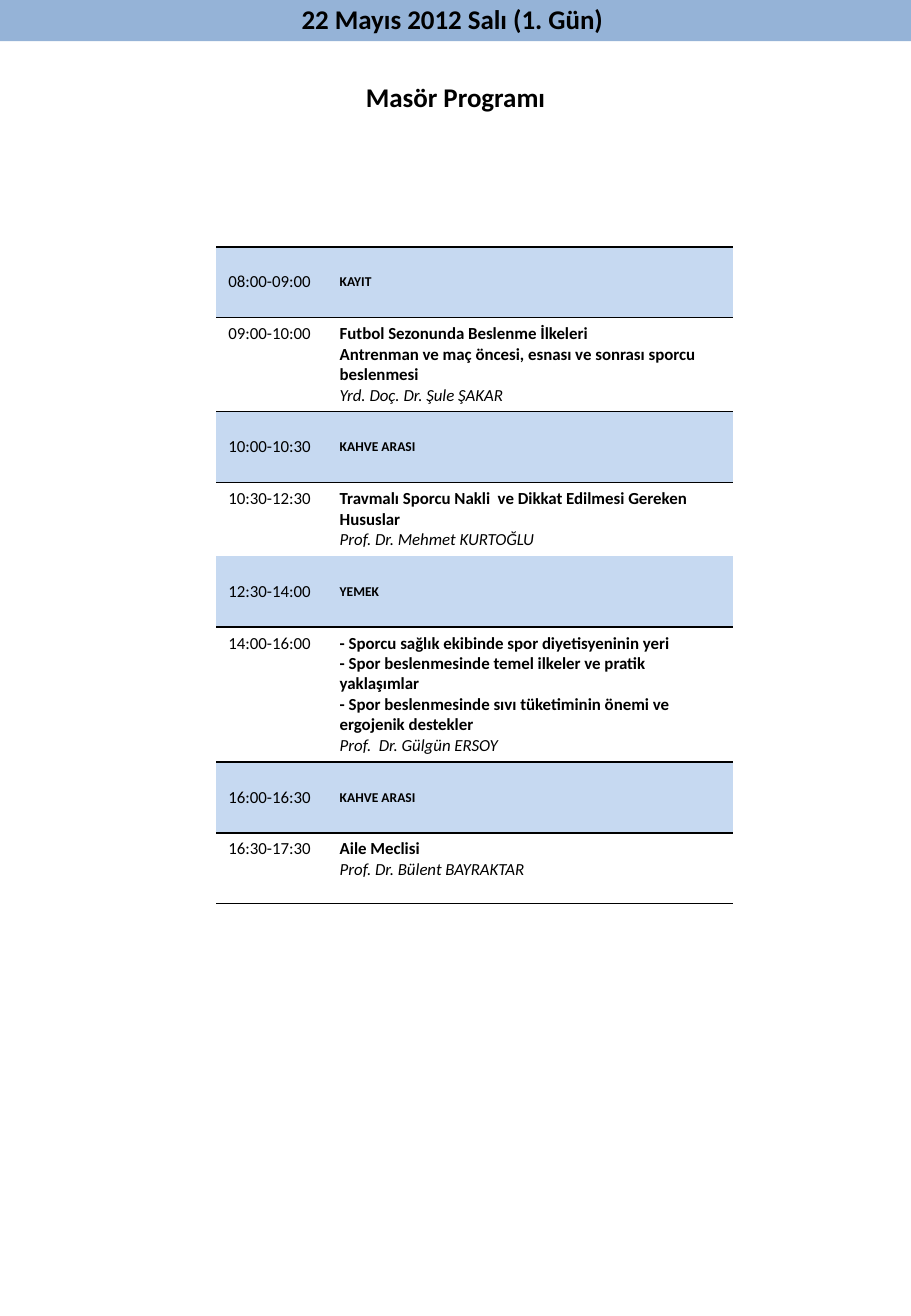
from dataclasses import dataclass

from lxml.etree import SubElement
from pptx import Presentation
from pptx.dml.color import RGBColor
from pptx.enum.shapes import MSO_SHAPE as Preset
from pptx.enum.text import MSO_ANCHOR as Anchor, MSO_AUTO_SIZE as AutoSize, PP_ALIGN as Align
from pptx.oxml.ns import qn
from pptx.slide import Slide
from pptx.table import _Cell as Cell
from pptx.text.text import TextFrame, _Paragraph as Paragraph
from pptx.util import Cm, Pt

FONT = "Calibri"
BLACK, BAND_BLUE, BREAK_BLUE = "000000", "95B3D7", "C6D9F1"
ROW_HEIGHT = 1.48
COLUMN_WIDTHS = (2.33, 8.48)


@dataclass(frozen=True)
class Session:
    hours: str
    topics: tuple[str, ...]
    speaker: str = ""
    height: float = ROW_HEIGHT
    ruled_below: bool = True

    @property
    def is_break(self) -> bool:
        return not self.speaker


SESSIONS = (
    Session("08:00-09:00", ("KAYIT",)),
    Session("09:00-10:00",
            ("Futbol Sezonunda Beslenme İlkeleri",
             "Antrenman ve maç öncesi, esnası ve sonrası sporcu beslenmesi"),
            "Yrd. Doç. Dr. Şule ŞAKAR"),
    Session("10:00-10:30", ("KAHVE ARASI",)),
    Session("10:30-12:30",
            ("Travmalı Sporcu Nakli  ve Dikkat Edilmesi Gereken Hususlar",),
            "Prof. Dr. Mehmet KURTOĞLU", ruled_below=False),
    Session("12:30-14:00", ("YEMEK",)),
    Session("14:00-16:00",
            ("- Sporcu sağlık ekibinde spor diyetisyeninin yeri",
             "- Spor beslenmesinde temel ilkeler ve pratik yaklaşımlar",
             "- Spor beslenmesinde sıvı tüketiminin önemi ve ergojenik destekler"),
            "Prof.  Dr. Gülgün ERSOY", height=1.9),
    Session("16:00-16:30", ("KAHVE ARASI",)),
    Session("16:30-17:30", ("Aile Meclisi",), "Prof. Dr. Bülent BAYRAKTAR"),
)


def color(value: str) -> RGBColor:
    return RGBColor.from_string(value)


def format_runs(paragraph: Paragraph, size: float, bold: bool = False, italic: bool = False) -> None:
    for run in paragraph.runs:
        font = run.font
        font.name, font.size, font.bold, font.italic = FONT, Pt(size), bold, italic
        font.color.rgb = color(BLACK)


def write_heading(frame: TextFrame, text: str) -> None:
    frame.text = text
    frame.word_wrap = True
    frame.auto_size = AutoSize.NONE
    frame.vertical_anchor = Anchor.MIDDLE
    heading = frame.paragraphs[0]
    heading.alignment = Align.CENTER
    format_runs(heading, 16, bold=True)


def set_borders(cell: Cell, above: bool, below: bool) -> None:
    """Rule the cell above and below as asked, and leave its sides open."""
    properties = cell._tc.get_or_add_tcPr()
    for side, ruled in (("L", False), ("R", False), ("T", above), ("B", below)):
        border = SubElement(properties, qn(f"a:ln{side}"), w=str(Pt(1)))
        if ruled:
            fill = SubElement(border, qn("a:solidFill"))
            SubElement(fill, qn("a:srgbClr"), val=BLACK)
        else:
            SubElement(border, qn("a:noFill"))


def add_day_band(slide: Slide) -> None:
    band = slide.shapes.add_shape(Preset.RECTANGLE, Cm(0), Cm(-0.08), Cm(19.05), Cm(0.94))
    band.shadow.inherit = False
    band.fill.solid()
    band.fill.fore_color.rgb = color(BAND_BLUE)
    band.line.fill.background()
    write_heading(band.text_frame, "22 Mayıs 2012 Salı (1. Gün) ")


def add_program_title(slide: Slide) -> None:
    title = slide.shapes.title
    title.left, title.top, title.width, title.height = Cm(6.12), Cm(1.55), Cm(6.81), Cm(0.94)
    write_heading(title.text_frame, "Masör Programı")


def add_schedule(slide: Slide) -> None:
    schedule = slide.shapes.add_table(
        len(SESSIONS), len(COLUMN_WIDTHS), Cm(4.52), Cm(5.16),
        Cm(sum(COLUMN_WIDTHS)), Cm(sum(session.height for session in SESSIONS))).table
    schedule.first_row = schedule.horz_banding = False
    for column, width in zip(schedule.columns, COLUMN_WIDTHS):
        column.width = Cm(width)

    ruled_above = True
    for row, session in zip(schedule.rows, SESSIONS):
        row.height = Cm(session.height)
        hours, details = row.cells
        hours.text = session.hours
        format_runs(hours.text_frame.paragraphs[0], 10)
        lines = session.topics if session.is_break else (*session.topics, session.speaker)
        details.text = "\n".join(lines)
        for line in details.text_frame.paragraphs:
            is_speaker = line.text == session.speaker
            format_runs(line, 8 if session.is_break else 10, not is_speaker, is_speaker)

        for cell in (hours, details):
            set_borders(cell, ruled_above, session.ruled_below)
            if session.is_break:
                cell.vertical_anchor = Anchor.MIDDLE
                cell.fill.solid()
                cell.fill.fore_color.rgb = color(BREAK_BLUE)
            else:
                cell.vertical_anchor = Anchor.TOP
                cell.fill.background()
        ruled_above = session.ruled_below


def main() -> None:
    presentation = Presentation()
    presentation.slide_width, presentation.slide_height = Cm(19.05), Cm(27.51)
    slide = presentation.slides.add_slide(presentation.slide_layouts.get_by_name("Title Only"))
    add_day_band(slide)
    add_program_title(slide)
    add_schedule(slide)
    presentation.save("out.pptx")


if __name__ == "__main__":
    main()
